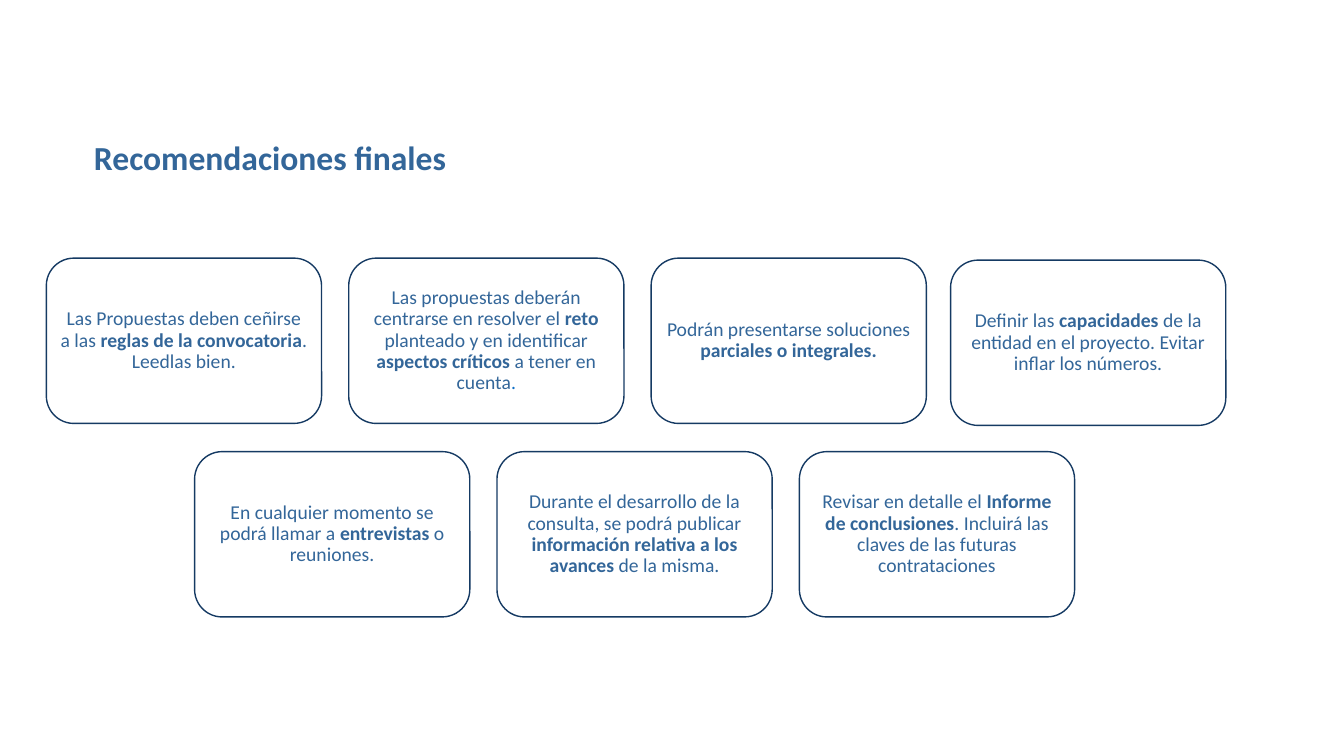
from pptx import Presentation
from pptx.dml.color import RGBColor
from pptx.enum.shapes import MSO_SHAPE
from pptx.enum.text import MSO_ANCHOR, PP_ALIGN
from pptx.util import Pt

TEXT_BLUE = RGBColor(0x33, 0x66, 0x99)
OUTLINE_NAVY = RGBColor(0x15, 0x3A, 0x63)
STOP_BLUE = RGBColor(0x0F, 0x6F, 0xC6)

CARD_WIDTH, CARD_HEIGHT, CARD_STEP = 196.6, 118.1, 216
UPPER_LEFT, UPPER_TOP = 33.1, 184.4
LOWER_LEFT, LOWER_TOP = 139, 322.6


def write(frame, text, size=14, align=PP_ALIGN.CENTER, anchor=MSO_ANCHOR.MIDDLE,
          inset=4.32, closing=""):
    frame.word_wrap = True
    frame.vertical_anchor = anchor
    frame.margin_left = frame.margin_right = Pt(inset)
    frame.margin_top = frame.margin_bottom = Pt(min(inset, 4.32))
    paragraph = frame.paragraphs[0]
    paragraph.alignment = align
    paragraph.line_spacing = 0.9
    pieces = [(part, index % 2 == 1, TEXT_BLUE)
              for index, part in enumerate(text.split("*"))]
    pieces.append((closing, False, STOP_BLUE))
    for part, bold, color in pieces:
        if part:
            run = paragraph.add_run()
            run.text = part
            run.font.name = "Calibri"
            run.font.size = Pt(size)
            run.font.bold = bold
            run.font.color.rgb = color


presentation = Presentation()
presentation.slide_width = Pt(960)
presentation.slide_height = Pt(540)
slide = presentation.slides.add_slide(presentation.slide_layouts[6])

heading = slide.shapes.add_textbox(Pt(60), Pt(96.5), Pt(840), Pt(41.8))
write(heading.text_frame, "*Recomendaciones finales*", size=24,
      align=PP_ALIGN.LEFT, anchor=MSO_ANCHOR.TOP, inset=7.2)

upper_advice = [
    ("Las Propuestas deben ceñirse a las *reglas de la convocatoria*. Leedlas bien.", ""),
    ("Las propuestas deberán centrarse en resolver el *reto* planteado y en identificar "
     "*aspectos críticos *a tener en cuenta", "."),
    ("Podrán presentarse soluciones *parciales o integrales.*", ""),
]
capacity_advice = ("Definir las *capacidades* de la entidad en el proyecto. "
                   "Evitar inflar los números.", "")
lower_advice = [
    ("En cualquier momento se podrá llamar a *entrevistas* o reuniones.", ""),
    ("Durante el desarrollo de la consulta, se podrá publicar "
     "*información relativa a los avances *de la misma.", ""),
    ("Revisar en detalle el *Informe de conclusiones*. "
     "Incluirá las claves de las futuras contrataciones", ""),
]

rows = [
    (UPPER_LEFT, UPPER_TOP, upper_advice),
    (679, 185.8, [capacity_advice]),
    (LOWER_LEFT, LOWER_TOP, lower_advice),
]
for row_left, row_top, advice in rows:
    for column, (text, closing) in enumerate(advice):
        card = slide.shapes.add_shape(
            MSO_SHAPE.ROUNDED_RECTANGLE, Pt(row_left + column * CARD_STEP),
            Pt(row_top), Pt(CARD_WIDTH), Pt(CARD_HEIGHT))
        card.shadow.inherit = False
        card.fill.background()
        card.line.color.rgb = OUTLINE_NAVY
        card.line.width = Pt(1)
        write(card.text_frame, text, closing=closing)

presentation.save("out.pptx")
